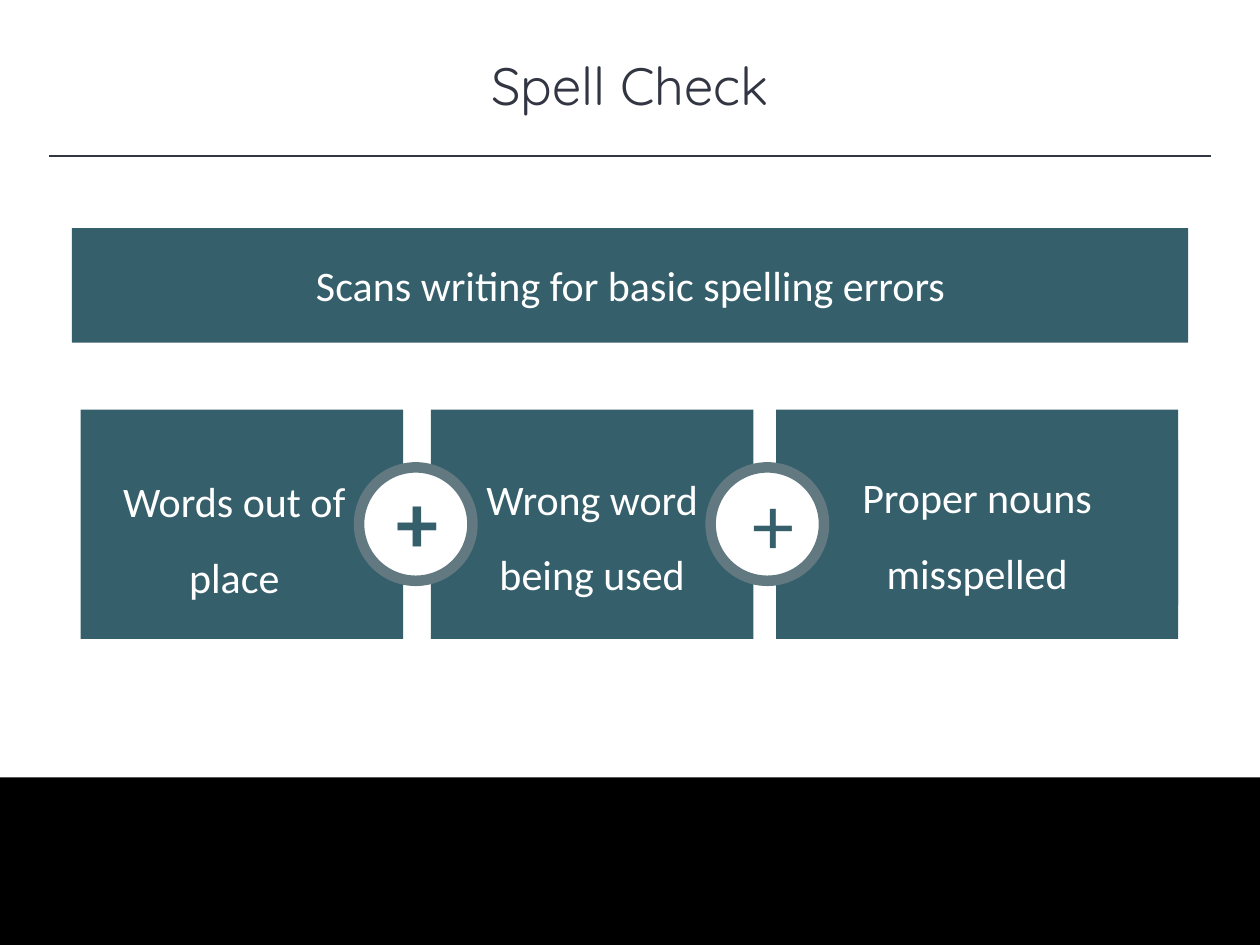
from lxml.etree import SubElement
from pptx import Presentation
from pptx.dml.color import RGBColor
from pptx.enum.shapes import MSO_CONNECTOR as Connector, MSO_SHAPE as Shape
from pptx.enum.text import MSO_ANCHOR as Anchor, MSO_AUTO_SIZE as AutoSize, PP_ALIGN as Align
from pptx.oxml.ns import qn
from pptx.util import Inches, Pt

COLORS = {"ink": "323542", "teal": "355F6B", "ring": "627981",
          "white": "FFFFFF", "black": "000000"}

BODY = {"name": "Calibri", "size": Pt(24), "bold": False}
TITLE = {"name": "Quicksand", "size": Pt(30), "bold": False}
PLUS = {"name": "Calibri", "size": Pt(48), "bold": False}


def color(name):
    return RGBColor.from_string(COLORS[name])


def box(left, top, width, height):
    return [Inches(value) for value in (left, top, width, height)]


def write(shape, text, font, ink, anchor=Anchor.TOP, spacing=None):
    frame = shape.text_frame
    frame.text = text
    frame.word_wrap = True
    frame.auto_size = AutoSize.SHAPE_TO_FIT_TEXT
    frame.vertical_anchor = anchor
    line = frame.paragraphs[0]
    line.alignment = Align.CENTER
    if spacing:
        line.line_spacing = spacing
    for key, value in font.items():
        setattr(line.font, key, value)
    line.font.color.rgb = color(ink)


def add_title(slide, text):
    title = slide.shapes.title
    title.left, title.top, title.width, title.height = box(0, 0.37, 10, 0.61)
    write(title, text, TITLE, "ink")


def add_rule(slide, left, right, y):
    rule = slide.shapes.add_connector(
        Connector.STRAIGHT, Inches(left), Inches(y), Inches(right), Inches(y))
    rule.line.color.rgb = color("ink")
    rule.line.width = Pt(1)
    SubElement(rule._element.spPr, qn("a:effectLst"))


def add_block(slide, place, fill, kind=Shape.RECTANGLE, ring=None):
    block = slide.shapes.add_shape(kind, *box(*place))
    block.shadow.inherit = False
    block.fill.solid()
    block.fill.fore_color.rgb = color(fill)
    if ring:
        block.line.color.rgb = color(ring)
        block.line.width = Pt(6)
    else:
        block.line.fill.background()
    return block


def add_card(slide, panel, label, text, **layout):
    add_block(slide, panel, "teal")
    write(add_block(slide, label, "teal"), text, BODY, "white", **layout)


def add_plus(slide, left, sign, bold):
    add_block(slide, (left, 3.71, 0.9, 0.9), "white", Shape.OVAL, "ring")
    mark = slide.shapes.add_textbox(*box(*sign))
    write(mark, "+", {**PLUS, "bold": bold}, "teal")


def main():
    deck = Presentation()
    deck.slide_width, deck.slide_height = Inches(10), Inches(7.5)
    slide = deck.slides.add_slide(deck.slide_layouts[5])

    # Heading and footer band
    add_title(slide, "Spell Check")
    add_rule(slide, 0.39, 9.61, 1.24)
    add_block(slide, (0, 6.17, 10, 1.33), "black")

    # Purpose banner
    add_card(slide, (0.57, 1.81, 8.86, 0.91), (1.79, 2.01, 6.43, 0.5),
             "Scans writing for basic spelling errors")

    # Error types: panel left and width, label left, top and width
    errors = [
        ("Words out of place", 0.64, 2.56, 0.71, 3.52, 2.3),
        ("Wrong word being used", 3.42, 2.56, 3.55, 3.5, 2.3),
        ("Proper nouns misspelled", 6.16, 3.19, 6.16, 3.49, 3.19),
    ]
    for text, left, width, label_left, label_top, label_width in errors:
        add_card(slide, (left, 3.25, width, 1.82),
                 (label_left, label_top, label_width, 1.31), text,
                 anchor=Anchor.MIDDLE, spacing=1.5)

    # Plus signs between the panels
    add_plus(slide, 2.85, (3.01, 3.68, 0.6, 0.91), bold=True)
    add_plus(slide, 5.64, (5.87, 3.69, 0.45, 0.91), bold=False)

    deck.save("out.pptx")


if __name__ == "__main__":
    main()
